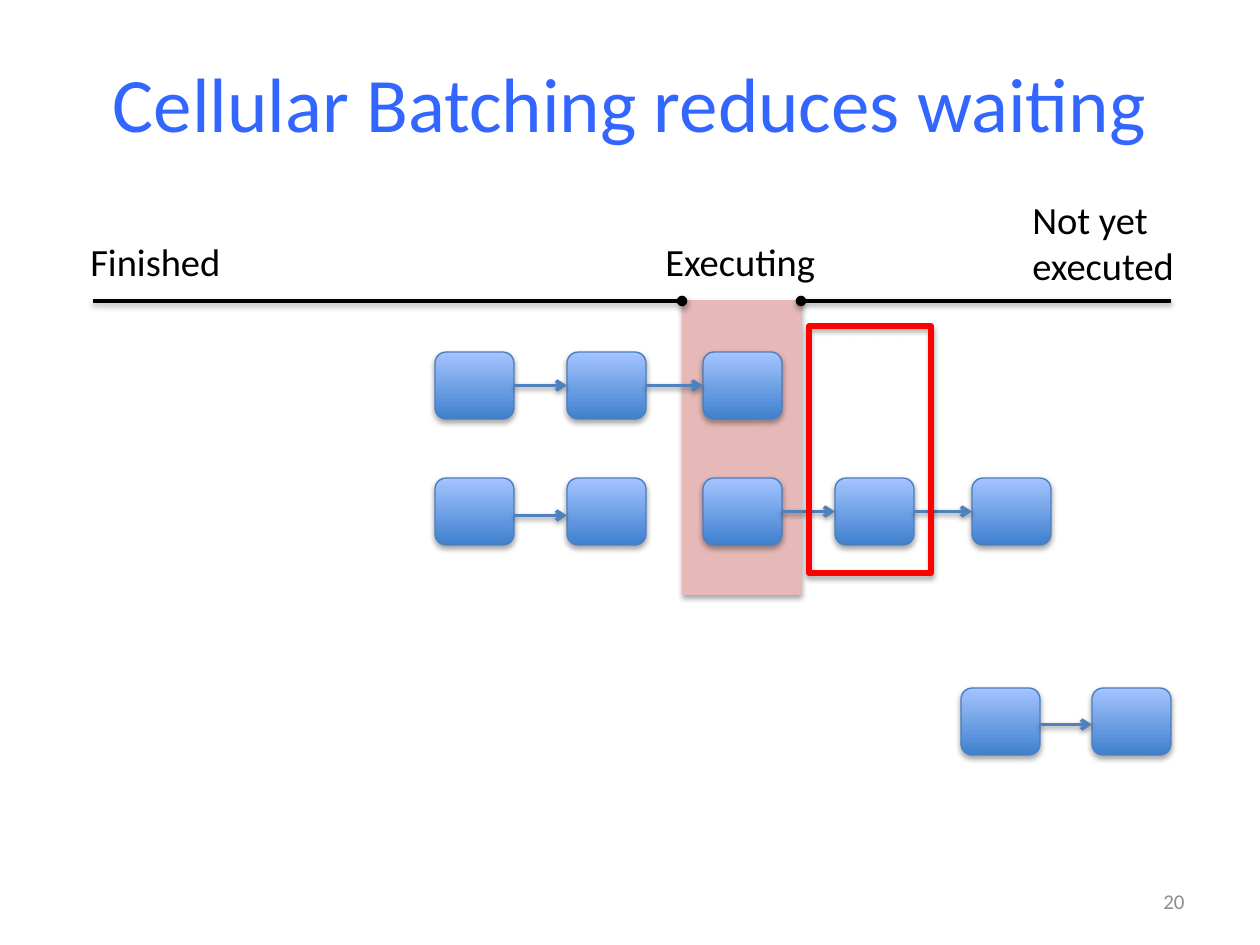
from lxml.etree import SubElement as Sub
from pptx import Presentation
from pptx.dml.color import RGBColor
from pptx.enum.shapes import MSO_CONNECTOR as Link, MSO_SHAPE as Shape
from pptx.enum.text import MSO_ANCHOR as Anchor, PP_ALIGN as Align
from pptx.oxml.ns import qn
from pptx.util import Pt

SCALE = 914400 / 126
BOX_W, BOX_H = 79, 67
COLS = [435, 567, 703, 835, 972]
TOP, MID, LOW = 352, 478, 688
AXIS = 301


def px(*nums):
    return [round(n * SCALE) for n in nums]


def color(code):
    return RGBColor.from_string(code)


def shade(item, alpha, dist):
    props = item._element.spPr
    glow = props.find(qn("a:effectLst"))
    if glow is None:
        glow = Sub(props, qn("a:effectLst"))
    cast = Sub(glow, qn("a:outerShdw"), blurRad="40000", dist=str(dist),
               dir="5400000", rotWithShape="0")
    tint = Sub(cast, qn("a:srgbClr"), val="000000")
    Sub(tint, qn("a:alpha"), val=str(alpha * 1000))


def stroke(item, code, width):
    item.line.color.rgb = color(code)
    item.line.width = Pt(width)


def text(slide, words, area, size=22, ink="000000", align=Align.LEFT,
         anchor=Anchor.TOP, wrap=False):
    frame = slide.shapes.add_textbox(*px(*area)).text_frame
    frame.word_wrap = wrap
    frame.vertical_anchor = anchor
    frame.text = words
    for para in frame.paragraphs:
        para.alignment = align
        font = para.runs[0].font
        font.name, font.size = "Calibri", Pt(size)
        font.color.rgb = color(ink)


def shape(shapes, kind, area, edge, width=0.75, fill=None):
    item = shapes.add_shape(kind, *px(*area))
    item.shadow.inherit = False
    if fill:
        item.fill.solid()
        item.fill.fore_color.rgb = color(fill)
    else:
        item.fill.background()
    stroke(item, edge, width)
    shade(item, 35, 23000)
    return item


def line(shapes, start, end, ink, head=None, tail=None):
    item = shapes.add_connector(Link.STRAIGHT, *px(*start, *end))
    stroke(item, ink, 2)
    edge = item.line._get_or_add_ln()
    for tag, kind in (("a:headEnd", head), ("a:tailEnd", tail)):
        if kind:
            Sub(edge, qn(tag), type=kind)
    shade(item, 38, 20000)
    return item


def cell(shapes, left, top):
    item = shape(shapes, Shape.ROUNDED_RECTANGLE, (left, top, BOX_W, BOX_H), "4B7EBC")
    item.fill.gradient()
    item.fill.gradient_angle = 90
    for stop, code in zip(item.fill.gradient_stops, ("3F80CE", "A4C4FF")):
        stop.color.rgb = color(code)
    return item


def chain(slide, lefts, top, drop=0):
    shapes = slide.shapes.add_group_shape().shapes
    cells = [cell(shapes, left, top) for left in lefts]
    y = top + BOX_H / 2 + drop
    for i in range(len(cells) - 1):
        arrow = line(shapes, (lefts[i] + BOX_W, y), (lefts[i + 1], y),
                     "4F81BD", tail="arrow")
        if not drop:
            arrow.begin_connect(cells[i], 3)
            arrow.end_connect(cells[i + 1], 1)


def main():
    deck = Presentation()
    deck.slide_width, deck.slide_height = px(1260, 945)
    slide = deck.slides.add_slide(deck.slide_layouts[6])
    shapes = slide.shapes

    shape(shapes, Shape.RECTANGLE, (683, AXIS, 118, 293), "E6B9B8", fill="E6B9B8")
    line(shapes, (801, AXIS), (1171, AXIS), "000000", head="oval")
    line(shapes, (93, AXIS), (682, AXIS), "000000", tail="oval")

    text(slide, "Cellular Batching reduces waiting", (63, 23, 1134, 157), size=44,
         ink="3366FF", align=Align.CENTER, anchor=Anchor.MIDDLE, wrap=True)
    text(slide, "20", (903, 876, 294, 50), size=12, ink="8C8C8C",
         align=Align.RIGHT, anchor=Anchor.MIDDLE, wrap=True)
    text(slide, "Finished", (78, 232, 156, 59))
    text(slide, "Executing", (653, 232, 176, 59))
    text(slide, "Not yet\nexecuted", (1020, 190, 169, 106))

    chain(slide, COLS[:3], TOP)
    chain(slide, COLS[:2], MID, drop=4)
    chain(slide, COLS[2:], MID)
    shape(shapes, Shape.RECTANGLE, (809, 326, 122, 247), "FF0000", width=3)
    chain(slide, [961, 1092], LOW, drop=3)

    deck.save("out.pptx")


if __name__ == "__main__":
    main()
